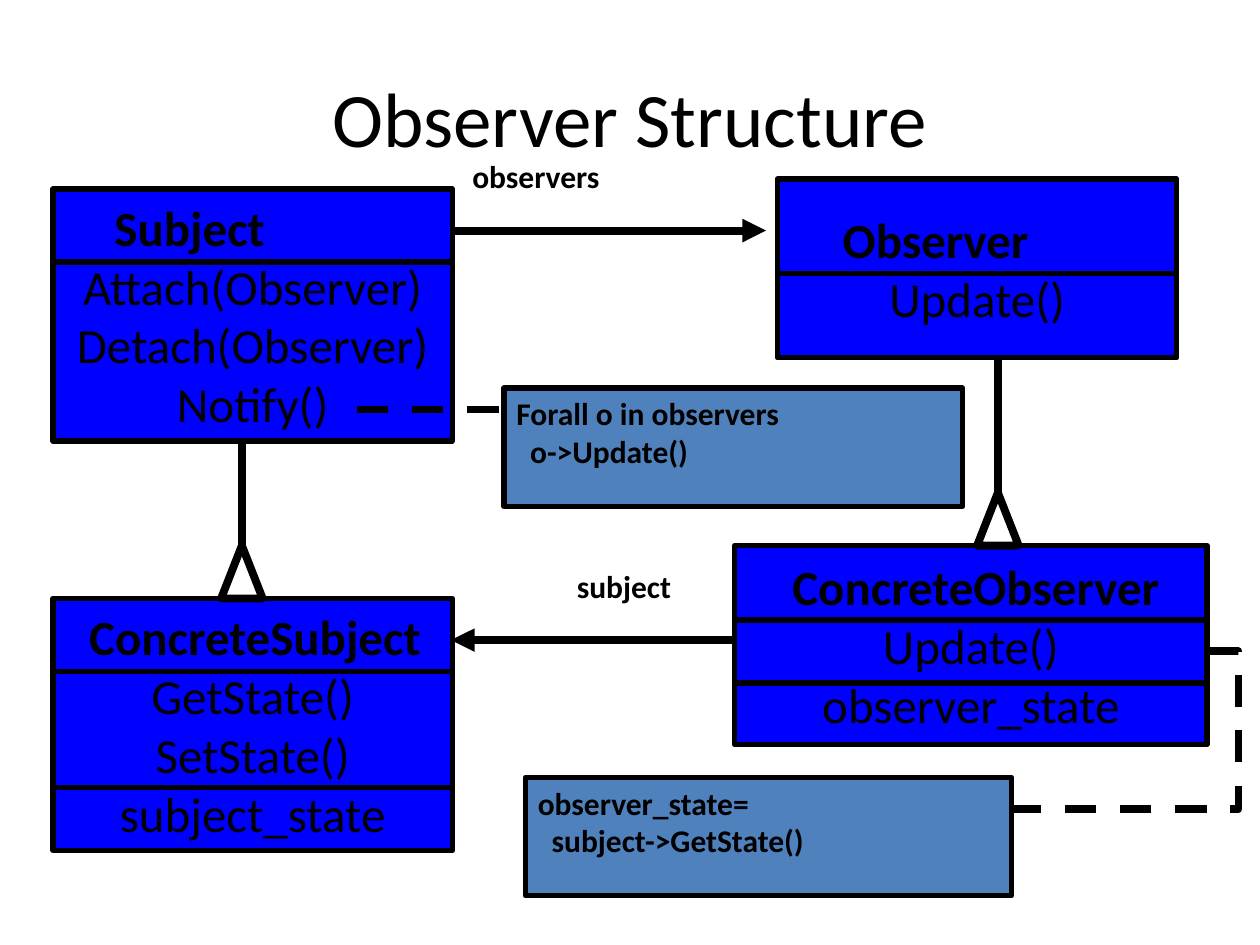
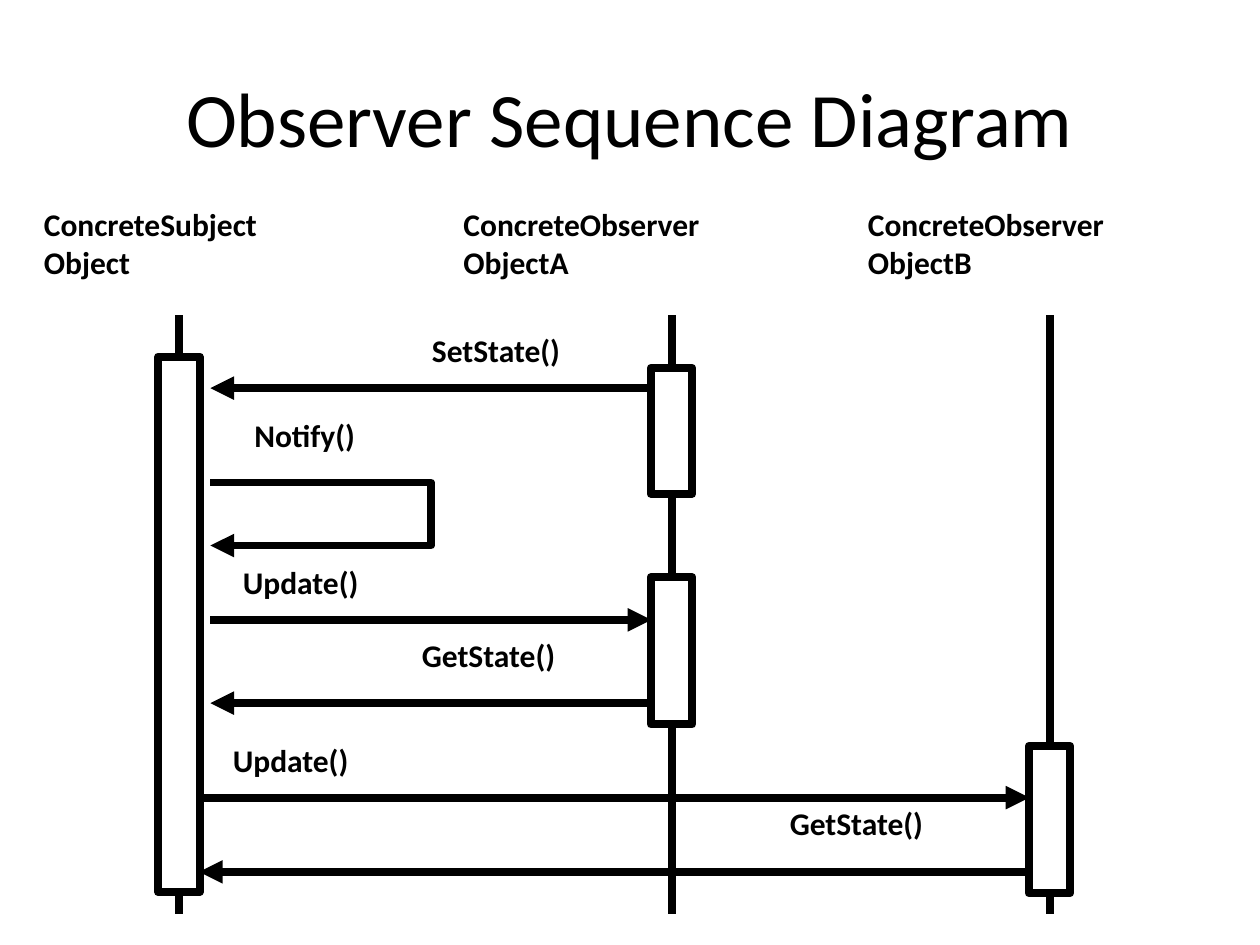
import pptx
import pptx.dml.color
import pptx.enum.dml
import pptx.enum.shapes
import pptx.enum.text
import pptx.oxml
import pptx.oxml.ns
import pptx.util

Inches = pptx.util.Inches
Pt = pptx.util.Pt
SHAPE = pptx.enum.shapes.MSO_SHAPE
ALIGN = pptx.enum.text.PP_ALIGN
ANCHOR = pptx.enum.text.MSO_ANCHOR

HEX = {"ink": "000000", "class": "0000FF", "note": "4F81BD", "bar": "FFFFFF"}
FONT = "Calibri"
THIN, THICK = 3, 4.5
BAR = 0.33  # width of an activation bar


def color(name):
    return pptx.dml.color.RGBColor.from_string(HEX[name])


def add_child(parent, tag, **attrs):
    node = pptx.oxml.parse_xml(f"<a:{tag} {pptx.oxml.ns.nsdecls('a')}/>")
    for key, value in attrs.items():
        node.set(key, value)
    parent.append(node)


def write(para, text, size, bold=False, align=ALIGN.LEFT, indent=0):
    para.alignment = align
    if indent:
        props = para._p.get_or_add_pPr()
        props.set("marL", str(Inches(indent)))
        props.set("indent", "0")
    run = para.add_run()
    run.text = text
    run.font.name = FONT
    run.font.size = Pt(size)
    run.font.bold = bold
    run.font.color.rgb = color("ink")


def next_para(frame, first):
    return frame.paragraphs[0] if first else frame.add_paragraph()


def stroke(shape, width, dash=False, arrow=False):
    line = shape.line
    line.color.rgb = color("ink")
    line.width = Pt(width)
    if dash:
        line.dash_style = pptx.enum.dml.MSO_LINE.DASH
    if arrow:
        add_child(line._get_or_add_ln(), "tailEnd", type="triangle")


def add_title(deck, text):
    slide = deck.slides.add_slide(deck.slide_layouts[5])
    title = slide.shapes.title
    title.left, title.top = Inches(0.5), Inches(0.3)
    title.width, title.height = Inches(9), Inches(1.25)
    title.text_frame.vertical_anchor = ANCHOR.MIDDLE
    write(title.text_frame.paragraphs[0], text, 44, align=ALIGN.CENTER)
    return slide


def add_box(slide, place, fill=None, width=THIN, kind=SHAPE.RECTANGLE):
    box = slide.shapes.add_shape(kind, *map(Inches, place))
    box.shadow.inherit = False
    if fill:
        box.fill.solid()
        box.fill.fore_color.rgb = color(fill)
    else:
        box.fill.background()
    stroke(box, width)
    return box


def add_line(slide, start, end, width=THICK, dash=False, arrow=False):
    line = slide.shapes.add_connector(
        pptx.enum.shapes.MSO_CONNECTOR.STRAIGHT, *map(Inches, start + end))
    stroke(line, width, dash, arrow)
    add_child(line._element.spPr, "effectLst")


def add_bend(slide, points, dash=False, arrow=False):
    """Draw an open line through several points."""
    spots = [(Inches(x), Inches(y)) for x, y in points]
    pen = slide.shapes.build_freeform(*spots[0])
    pen.add_line_segments(spots[1:], close=False)
    bend = pen.convert_to_shape()
    bend.shadow.inherit = False
    bend.fill.background()
    stroke(bend, THICK, dash, arrow)


def add_class(slide, place, name, indent, members, rules):
    """Draw a class box with its name, members and the rules between parts."""
    frame = add_box(slide, place, "class").text_frame
    frame.word_wrap = True
    frame.vertical_anchor = ANCHOR.MIDDLE
    write(frame.paragraphs[0], name, 28, bold=True, indent=indent)
    for member in members:
        write(frame.add_paragraph(), member, 28, align=ALIGN.CENTER)
    left, _, width, _ = place
    for y in rules:
        add_line(slide, (left, y), (left + width, y), THIN)


def add_note(slide, place, lines):
    frame = add_box(slide, place, "note").text_frame
    frame.word_wrap = True
    frame.vertical_anchor = ANCHOR.TOP
    for i, line in enumerate(lines):
        write(next_para(frame, i == 0), line, 18, bold=True, indent=0.11 * i)


def add_label(slide, left, top, *lines, width=2):
    box = slide.shapes.add_textbox(
        *map(Inches, (left, top, width, 0.1 + 0.4 * len(lines))))
    box.text_frame.word_wrap = True
    for i, line in enumerate(lines):
        write(next_para(box.text_frame, i == 0), line, 18, bold=True)


def add_parent(slide, x, top, base):
    """Join two classes with a line that ends in a hollow triangle."""
    tip = base - 0.42
    add_box(slide, (x - BAR / 2, tip, BAR, 0.42), width=THICK,
            kind=SHAPE.ISOSCELES_TRIANGLE)
    add_line(slide, (x, top), (x, tip))


def draw_classes(deck):
    slide = add_title(deck, "Observer Structure")
    classes = [
        ((0.42, 1.5, 3.17, 2), "Subject", 0.39,
         ["Attach(Observer)", "Detach(Observer)", "Notify()"], [2.08]),
        ((6.17, 1.42, 3.17, 1.42), "Observer", 0.42, ["Update()"], [2.17]),
        ((0.42, 4.75, 3.17, 2), "ConcreteSubject", 0.19,
         ["GetState()", "SetState()", "subject_state"], [5.33, 6.25]),
        ((5.83, 4.33, 3.75, 1.58), "ConcreteObserver", 0.36,
         ["Update()", "observer_state"], [4.92, 5.42]),
    ]
    for item in classes:
        add_class(slide, *item)

    add_parent(slide, 1.92, 3.5, 4.75)
    add_parent(slide, 7.92, 2.83, 4.33)
    add_line(slide, (3.58, 1.83), (6.08, 1.83), arrow=True)
    add_label(slide, 3.65, 1.2, "observers")
    add_line(slide, (5.83, 5.08), (3.58, 5.08), arrow=True)
    add_label(slide, 4.48, 4.45, "subject", width=1.3)

    add_note(slide, (4, 3.08, 3.64, 0.94),
             ["Forall o in observers", "o->Update()"])
    add_line(slide, (2.83, 3.25), (4, 3.25), dash=True)
    add_note(slide, (4.17, 6.17, 3.86, 0.94),
             ["observer_state=", "subject->GetState()"])
    add_bend(slide, [(9.58, 5.17), (9.83, 5.17), (9.83, 6.42), (8, 6.42)],
             dash=True)


def draw_calls(deck):
    slide = add_title(deck, "Observer Sequence Diagram")
    # life line x, label x, label, (top, height) of each bar
    actors = [
        (1.42, 0.25, ("ConcreteSubject", "Object"), [(2.83, 4.25)]),
        (5.33, 3.58, ("ConcreteObserver", "ObjectA"),
         [(2.92, 1), (4.58, 1.17)]),
        (8.33, 6.79, ("ConcreteObserver", "ObjectB"), [(5.92, 1.17)]),
    ]
    for x, left, name, bars in actors:
        add_label(slide, left, 1.58, *name, width=3)
        add_line(slide, (x, 2.5), (x, 7.25))
        for top, height in bars:
            add_box(slide, (x - BAR / 2, top, BAR, height), "bar", THICK)

    # from x, to x, y, label, label place
    calls = [
        (5.17, 1.67, 3.08, "SetState()", (3.33, 2.58)),
        (1.67, 5.17, 4.92, "Update()", (1.83, 4.42)),
        (5.17, 1.67, 5.58, "GetState()", (3.25, 5)),
        (1.58, 8.17, 6.33, "Update()", (1.75, 5.83)),
        (8.17, 1.58, 6.92, "GetState()", (6.17, 6.33)),
    ]
    for start, end, y, text, place in calls:
        add_line(slide, (start, y), (end, y), arrow=True)
        add_label(slide, *place, text)
    add_bend(slide, [(1.67, 3.83), (3.42, 3.83), (3.42, 4.33), (1.67, 4.33)],
             arrow=True)
    add_label(slide, 1.92, 3.25, "Notify()")


def main():
    deck = pptx.Presentation()
    deck.slide_width, deck.slide_height = Inches(10), Inches(7.5)
    draw_classes(deck)
    draw_calls(deck)
    deck.save("out.pptx")


if __name__ == "__main__":
    main()
